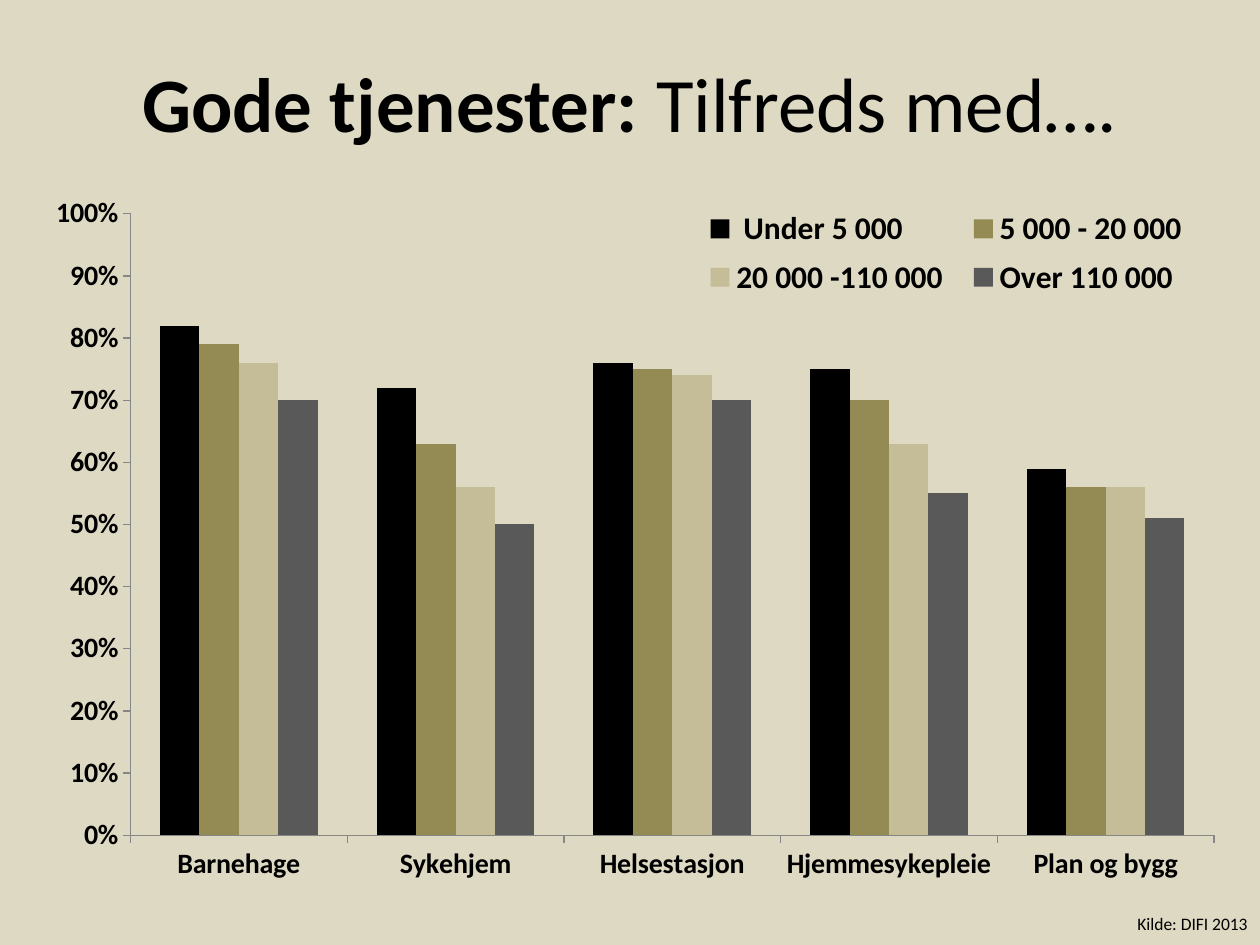
import pptx
import pptx.chart.data
import pptx.dml.color
import pptx.enum.chart
import pptx.enum.text
import pptx.oxml
import pptx.oxml.ns
import pptx.util

WIDE, HIGH = 10, 7.5
PLACES = ("Barnehage", "Sykehjem", "Helsestasjon", "Hjemmesykepleie", "Plan og bygg")
GROUPS = (
    (" Under 5 000", "000000", (0.82, 0.72, 0.76, 0.75, 0.59)),
    ("5 000 - 20 000", "948A54", (0.79, 0.63, 0.75, 0.7, 0.56)),
    ("20 000 -110 000", "C4BD97", (0.76, 0.56, 0.74, 0.63, 0.56)),
    ("Over 110 000", "595959", (0.7, 0.5, 0.7, 0.55, 0.51)),
)


def paint(form, color):
    """Give a fill or a font a solid colour."""
    fill = form.fill if hasattr(form, "fill") else form
    fill.solid()
    fill.fore_color.rgb = pptx.dml.color.RGBColor.from_string(color)


def assign(target, values):
    for name, value in values.items():
        setattr(target, name, value)


def arrange(part, index, shares, inner=False):
    """Place a chart part by shares of the chart's size."""
    for old in part.findall(pptx.oxml.ns.qn("c:layout")):
        part.remove(old)
    rows = '<c:layoutTarget val="inner"/>' if inner else ""
    rows += '<c:xMode val="edge"/><c:yMode val="edge"/>'
    rows += "".join(f'<c:{key} val="{share}"/>' for key, share in zip("xywh", shares))
    space = pptx.oxml.ns.nsdecls("c")
    part.insert(index, pptx.oxml.parse_xml(
        f"<c:layout {space}><c:manualLayout>{rows}</c:manualLayout></c:layout>"))


class Sheet:
    """Holds the style and the current slide."""

    face, ink, line = "Calibri", "000000", "868686"

    def __init__(self, deck, back):
        self.slide = deck.slides.add_slide(deck.slide_layouts[5])
        self.size = (deck.slide_width, deck.slide_height) * 2
        paint(self.slide.background.fill, back)

    def box(self, shares):
        return [int(share * full) for share, full in zip(shares, self.size)]

    def style(self, font, size, bold=False):
        assign(font, {"name": self.face, "size": pptx.util.Pt(size), "bold": bold})
        paint(font, self.ink)

    def letter(self, shape, runs, size, align, anchor):
        """Put styled runs into a shape."""
        frame = shape.text_frame
        assign(frame, {"word_wrap": True, "vertical_anchor": anchor})
        para = frame.paragraphs[0]
        para.alignment = align
        for text, bold in runs:
            run = para.add_run()
            run.text = text
            self.style(run.font, size, bold)

    def title(self, shares, runs):
        shape = self.slide.shapes.title
        assign(shape, dict(zip(("left", "top", "width", "height"), self.box(shares))))
        self.letter(shape, runs, 44, pptx.enum.text.PP_ALIGN.CENTER,
                    pptx.enum.text.MSO_ANCHOR.MIDDLE)

    def note(self, shares, text):
        shape = self.slide.shapes.add_textbox(*self.box(shares))
        self.letter(shape, [(text, False)], 10, pptx.enum.text.PP_ALIGN.RIGHT,
                    pptx.enum.text.MSO_ANCHOR.TOP)
        shape.text_frame.auto_size = pptx.enum.text.MSO_AUTO_SIZE.SHAPE_TO_FIT_TEXT

    def columns(self, shares, places, groups):
        data = pptx.chart.data.CategoryChartData(number_format="0%")
        data.categories = places
        for name, _, values in groups:
            data.add_series(name, values)
        kind = pptx.enum.chart.XL_CHART_TYPE.COLUMN_CLUSTERED
        chart = self.slide.shapes.add_chart(kind, *self.box(shares), data).chart
        self.style(chart.font, 16)
        assign(chart, {"has_title": False, "has_legend": True})
        plot = chart.plots[0]
        assign(plot, {"gap_width": 150, "overlap": 0, "vary_by_categories": False})
        for series, (_, color, _) in zip(plot.series, groups):
            paint(series.format, color)
        for axis in (chart.category_axis, chart.value_axis):
            assign(axis, {"has_major_gridlines": False,
                          "major_tick_mark": pptx.enum.chart.XL_TICK_MARK.OUTSIDE})
            self.style(axis.tick_labels.font, 16, True)
            paint(axis.format.line, self.line)
        assign(chart.value_axis, {"minimum_scale": 0, "maximum_scale": 1, "major_unit": 0.1})
        assign(chart.value_axis.tick_labels,
               {"number_format": "0%", "number_format_is_linked": False})
        legend = chart.legend
        assign(legend, {"position": pptx.enum.chart.XL_LEGEND_POSITION.RIGHT,
                        "include_in_layout": True})
        self.style(legend.font, 18, True)
        area = chart.element.find(".//" + pptx.oxml.ns.qn("c:plotArea"))
        arrange(area, 0, (0.08, 0.04, 0.91, 0.87), inner=True)
        key = chart.element.find(".//" + pptx.oxml.ns.qn("c:legend"))
        arrange(key, 1, (0.55, 0.02, 0.43, 0.15))


def main():
    deck = pptx.Presentation()
    deck.slide_width, deck.slide_height = pptx.util.Inches(WIDE), pptx.util.Inches(HIGH)
    sheet = Sheet(deck, "DDD9C3")
    sheet.columns((0.28 / WIDE, 1.47 / HIGH, 9.45 / WIDE, 5.67 / HIGH), PLACES, GROUPS)
    sheet.title((0.05, 0.04, 0.9, 1.01 / HIGH),
                [("Gode tjenester: ", True), ("Tilfreds med….", False)])
    sheet.note((7.87 / WIDE, 0.96, 2.13 / WIDE, 0.27 / HIGH), "Kilde: DIFI 2013")
    deck.save("out.pptx")


if __name__ == "__main__":
    main()
